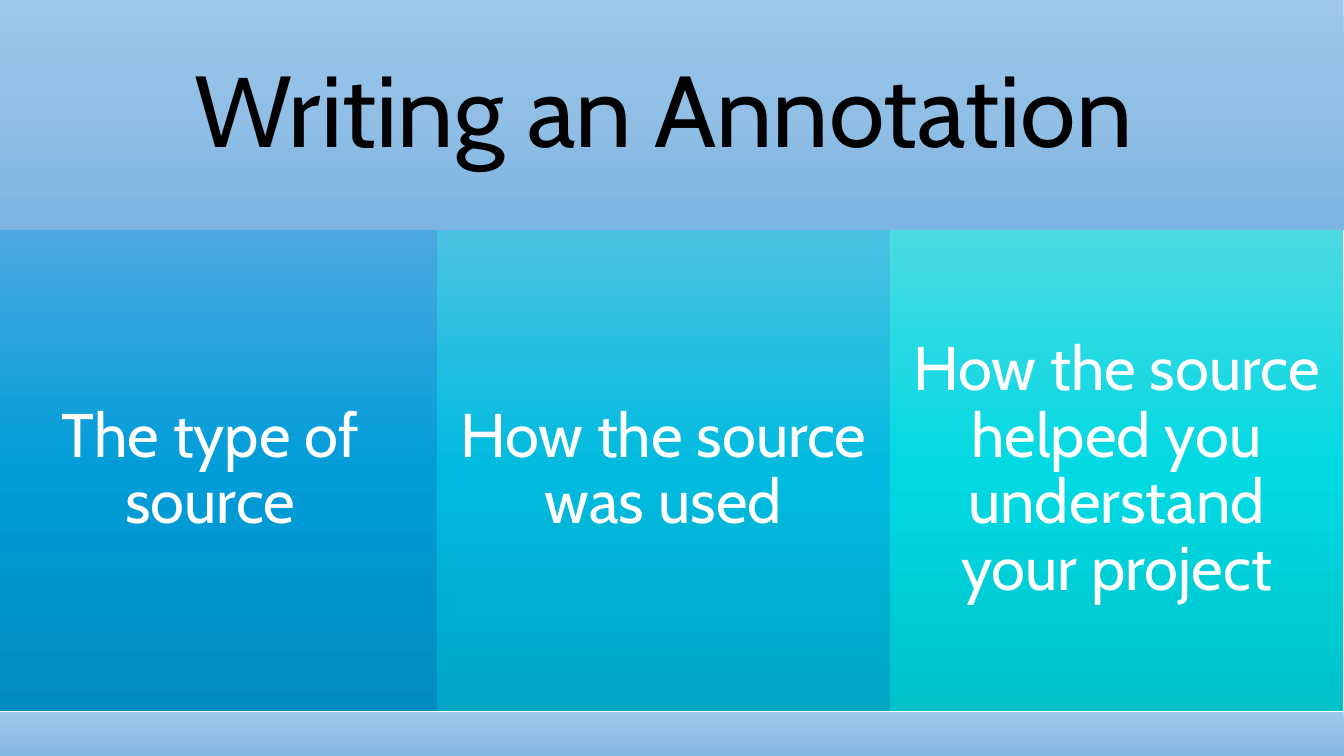
import copy

import pptx
import pptx.dml.color
import pptx.enum.shapes
import pptx.enum.text
import pptx.oxml.ns
import pptx.util

Cm = pptx.util.Cm
RGBColor = pptx.dml.color.RGBColor

BLACK = RGBColor(0x00, 0x00, 0x00)
WHITE = RGBColor(0xFF, 0xFF, 0xFF)
PALE_BLUE = (RGBColor(0x9D, 0xC9, 0xED), RGBColor(0x90, 0xBE, 0xE5), RGBColor(0x7C, 0xB5, 0xE1))
BLUE = (RGBColor(0x4B, 0xA8, 0xE0), RGBColor(0x00, 0x9D, 0xD9), RGBColor(0x00, 0x8C, 0xC1))
CYAN = (RGBColor(0x4B, 0xC2, 0xE3), RGBColor(0x00, 0xBB, 0xDF), RGBColor(0x00, 0xA6, 0xC6))
TURQUOISE = (RGBColor(0x4B, 0xDA, 0xE2), RGBColor(0x01, 0xD9, 0xE3), RGBColor(0x00, 0xC2, 0xCB))

BAND_LEFT, BAND_WIDTH = -0.43, 34.29
TITLE_HEIGHT = 5.79
COLUMN_LEFT, COLUMN_WIDTH, COLUMN_HEIGHT = -0.41, 11.42, 12.14
COLUMNS = (
    ("The type of source", BLUE),
    ("How the source was used", CYAN),
    ("How the source helped you understand your project", TURQUOISE),
)


class SlideBuilder:
    """Draw gradient panels and their text on one slide."""

    font_name = "Cabin"

    def __init__(self, slide):
        self.slide = slide

    def fill_gradient(self, shape, colors):
        shape.fill.gradient()
        shape.fill.gradient_angle = 270
        stop_list = shape.element.spPr.find(".//" + pptx.oxml.ns.qn("a:gsLst"))
        stop_list.append(copy.deepcopy(stop_list[-1]))
        for stop, position, color in zip(shape.fill.gradient_stops, (0, 0.5, 1), colors):
            stop.position = position
            stop.color.rgb = color

    def set_text(self, shape, text, size, color, inset):
        frame = shape.text_frame
        frame.text = text
        frame.word_wrap = True
        frame.auto_size = pptx.enum.text.MSO_AUTO_SIZE.NONE
        frame.vertical_anchor = pptx.enum.text.MSO_ANCHOR.MIDDLE
        frame.margin_left = frame.margin_right = Cm(inset)
        frame.margin_top = frame.margin_bottom = Cm(inset)
        paragraph = frame.paragraphs[0]
        paragraph.alignment = pptx.enum.text.PP_ALIGN.CENTER
        paragraph.line_spacing = 0.9
        paragraph.font.name = self.font_name
        paragraph.font.size = pptx.util.Pt(size)
        paragraph.font.color.rgb = color

    def title(self, text, left, top, width, height, colors):
        shape = self.slide.shapes.title
        shape.left, shape.top = Cm(left), Cm(top)
        shape.width, shape.height = Cm(width), Cm(height)
        self.fill_gradient(shape, colors)
        self.set_text(shape, text, 72, BLACK, 0.76)

    def panel(self, left, top, width, height, colors):
        shape = self.slide.shapes.add_shape(
            pptx.enum.shapes.MSO_SHAPE.RECTANGLE, Cm(left), Cm(top), Cm(width), Cm(height)
        )
        shape.shadow.inherit = False
        shape.line.fill.background()
        self.fill_gradient(shape, colors)
        return shape


def main():
    presentation = pptx.Presentation()
    presentation.slide_width = Cm(33.87)
    presentation.slide_height = Cm(19.05)
    slide = presentation.slides.add_slide(presentation.slide_layouts.get_by_name("Title Only"))
    builder = SlideBuilder(slide)

    builder.title("Writing an Annotation", BAND_LEFT, 0, BAND_WIDTH, TITLE_HEIGHT, PALE_BLUE)
    for index, (text, colors) in enumerate(COLUMNS):
        left = COLUMN_LEFT + index * COLUMN_WIDTH
        column = builder.panel(left, TITLE_HEIGHT, COLUMN_WIDTH, COLUMN_HEIGHT, colors)
        builder.set_text(column, text, 44, WHITE, 0.46)
    builder.panel(BAND_LEFT, TITLE_HEIGHT + COLUMN_HEIGHT, BAND_WIDTH, 1.35, PALE_BLUE)

    presentation.save("out.pptx")


if __name__ == "__main__":
    main()
